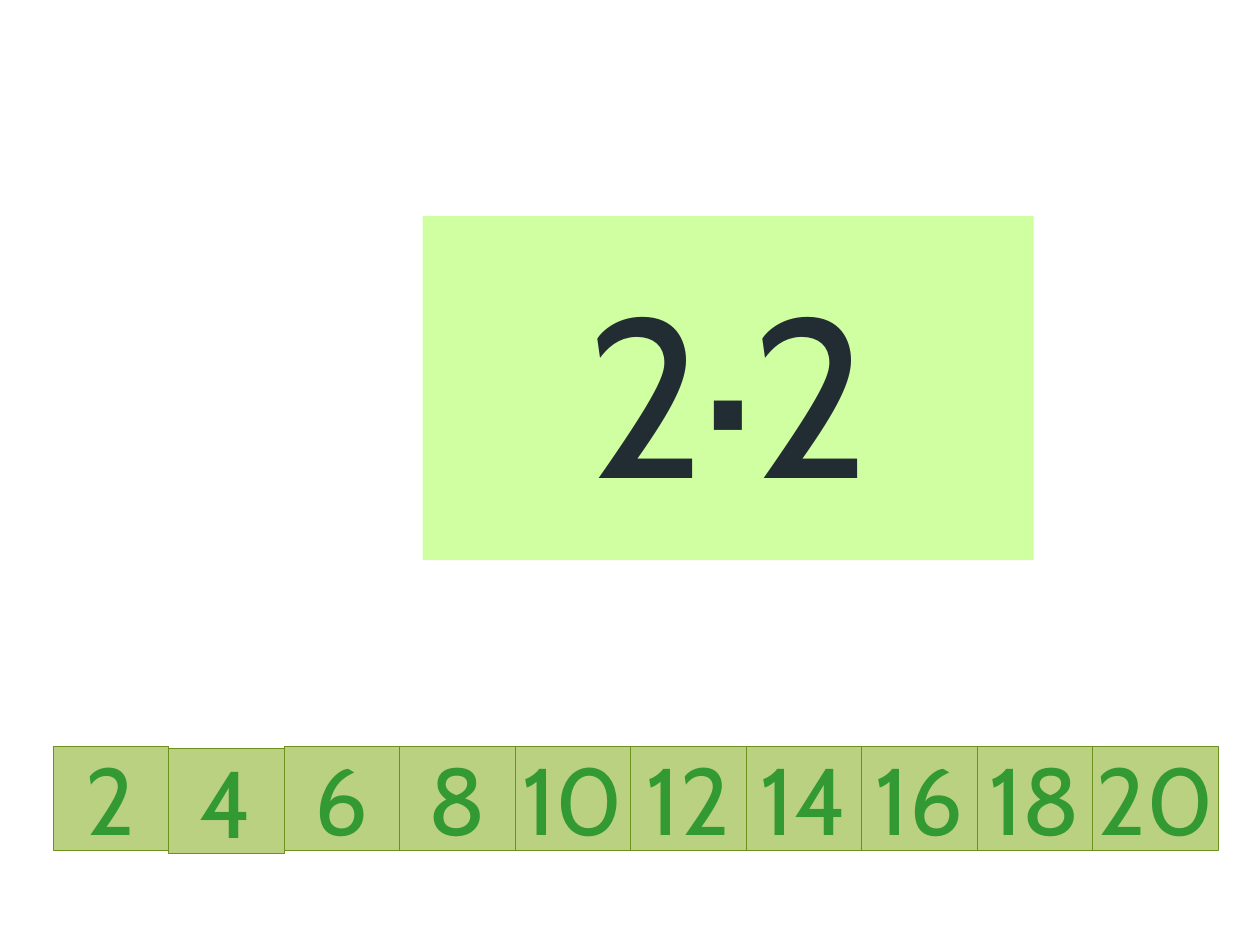
from lxml import etree
from pptx import Presentation
from pptx.dml.color import RGBColor
from pptx.enum import shapes, text
from pptx.oxml import ns
from pptx.util import Inches, Pt

FONT = "Cabin"
BUTTON_FILL = RGBColor(0xB9, 0xD1, 0x81)
BUTTON_LINE = RGBColor(0x6C, 0x92, 0x1D)
BUTTON_TEXT = RGBColor(0x33, 0x99, 0x33)
CARD_FILL = RGBColor(0xCC, 0xFF, 0x99)
CARD_TEXT = RGBColor(0x21, 0x2D, 0x32)


def set_opacity(fill_format, percent):
    """Make a solid fill partly transparent."""
    color = fill_format._xPr.find(ns.qn("a:solidFill"))[0]
    etree.SubElement(color, ns.qn("a:alpha"), val=str(percent * 1000))


def add_label_box(slide, preset, box, label, size, fill, line, line_width, color):
    shape = slide.shapes.add_shape(preset, *box)
    shape.shadow.inherit = False
    shape.fill.solid()
    shape.fill.fore_color.rgb = fill
    shape.line.color.rgb = line
    shape.line.width = Pt(line_width)

    frame = shape.text_frame
    frame.word_wrap = False
    frame.vertical_anchor = text.MSO_ANCHOR.MIDDLE
    paragraph = frame.paragraphs[0]
    paragraph.alignment = text.PP_ALIGN.CENTER
    run = paragraph.add_run()
    run.text = label
    run.font.name = FONT
    run.font.size = Pt(size)
    run.font.color.rgb = color
    return shape


def add_answer_row(slide, left, top, width, height, answers, correct):
    """Equal buttons, the last a little wider; the correct one sits lower, behind."""
    last_width = Inches(1)
    pitch = (width - last_width) / (len(answers) - 1)
    buttons = list(enumerate(answers))
    for index, answer in sorted(buttons, key=lambda button: button[1] != correct):
        button_left = round(left + index * pitch)
        button_top = top + (Inches(0.02) if answer == correct else 0)
        button_width = last_width if answer == answers[-1] else round(pitch)
        add_label_box(slide, shapes.MSO_SHAPE.ACTION_BUTTON_CUSTOM,
                      (button_left, button_top, button_width, height),
                      str(answer), 54, BUTTON_FILL, BUTTON_LINE, 0.25, BUTTON_TEXT)


def add_question_card(slide, left, top, width, height, question):
    card = add_label_box(slide, shapes.MSO_SHAPE.RECTANGLE, (left, top, width, height),
                         question, 129, CARD_FILL, CARD_FILL, 0.75, CARD_TEXT)
    set_opacity(card.fill, 91)
    set_opacity(card.line.fill, 81)


def main():
    presentation = Presentation()
    presentation.slide_width = Inches(10)
    presentation.slide_height = Inches(7.5)
    slide = presentation.slides.add_slide(presentation.slide_layouts[6])
    add_answer_row(slide, Inches(0.42), Inches(5.92), Inches(9.25), Inches(0.83),
                   answers=range(2, 21, 2), correct=4)
    add_question_card(slide, Inches(3.36), Inches(1.72), Inches(4.84), Inches(2.72), "2·2")
    presentation.save("out.pptx")


if __name__ == "__main__":
    main()
